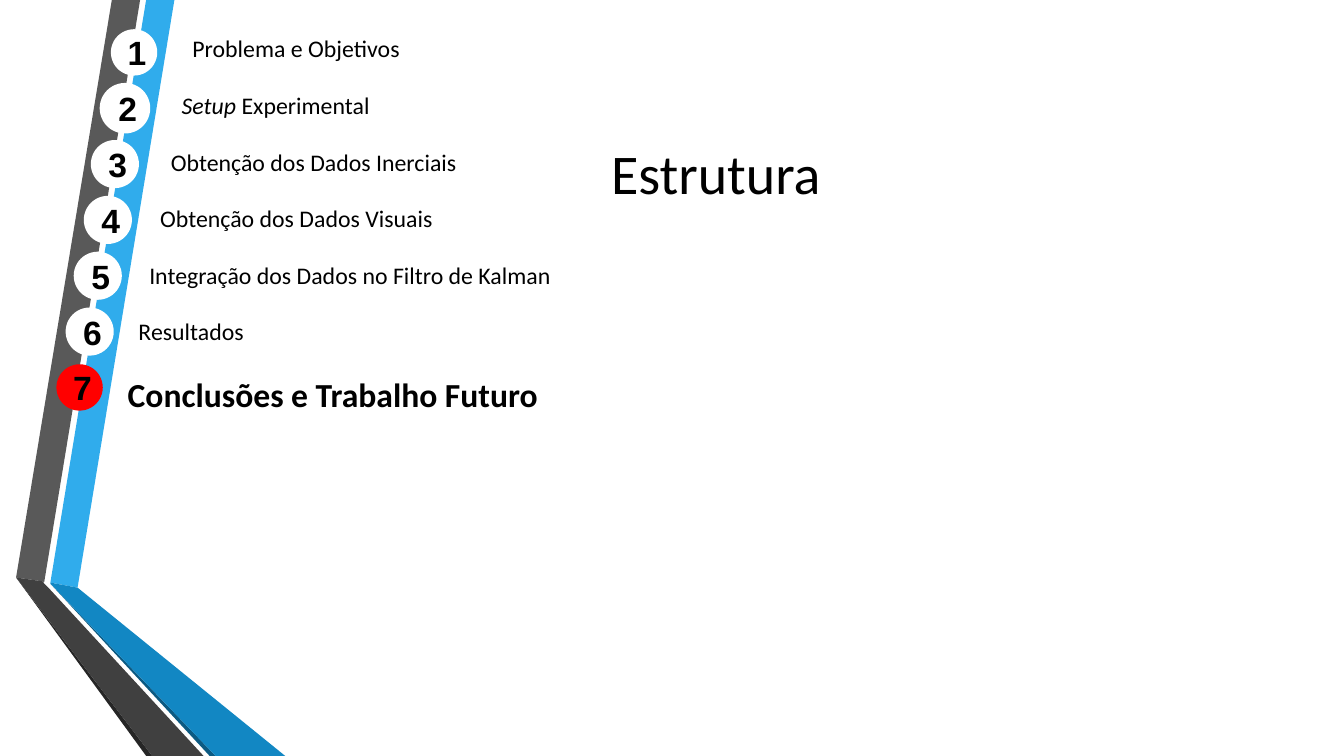
from pptx import Presentation
from pptx.dml.color import RGBColor
from pptx.enum.shapes import MSO_SHAPE
from pptx.enum.text import MSO_ANCHOR, PP_ALIGN
from pptx.util import Inches, Pt


def color(code):
    return RGBColor.from_string(code)


def write(para, text, font="Calibri", size=17, bold=False, italic=False):
    run = para.add_run()
    run.text = text
    run.font.name = font
    run.font.size = Pt(size)
    run.font.bold = bold
    run.font.italic = italic
    run.font.color.rgb = color("000000")


class Deck:
    """Holds the slide and draws each kind of element on it."""

    def __init__(self, slide):
        self.shapes = slide.shapes

    def paint(self, shape, fill, line=0):
        shape.shadow.inherit = False
        shape.fill.solid()
        shape.fill.fore_color.rgb = color(fill)
        if line:
            shape.line.color.rgb = color(fill)
            shape.line.width = Pt(line)
        else:
            shape.line.fill.background()

    def band(self, fill, points):
        spots = [(Inches(x), Inches(y)) for x, y in points]
        form = self.shapes.build_freeform(*spots[0], scale=1.0)
        form.add_line_segments(spots[1:], close=True)
        self.paint(form.convert_to_shape(), fill)

    def box(self, left, top, width, height):
        area = [Inches(v) for v in (left, top, width, height)]
        frame = self.shapes.add_textbox(*area).text_frame
        frame.word_wrap = True
        return frame

    def title(self, text):
        frame = self.box(1.62, 0.75, 10.96, 1.92)
        frame.vertical_anchor = MSO_ANCHOR.MIDDLE
        para = frame.paragraphs[0]
        para.alignment = PP_ALIGN.CENTER
        write(para, text, size=40)

    def topics(self, items):
        frame = self.box(0, 0.29, 10.51, 3.93)
        for i, runs in enumerate(items):
            para = frame.add_paragraph() if i else frame.paragraphs[0]
            if i:
                para.space_before = Pt(20)
            # Each line starts a step further left, along the band
            props = para._p.get_or_add_pPr()
            props.set("marL", str(Inches(1.81 - 0.107 * i)))
            props.set("indent", "0")
            for text, style in runs:
                write(para, text, **style)

    def badge(self, label, left, top, fill, line):
        side = Inches(0.46)
        disc = self.shapes.add_shape(
            MSO_SHAPE.OVAL, Inches(left), Inches(top), side, side)
        self.paint(disc, fill, line)
        frame = disc.text_frame
        frame.vertical_anchor = MSO_ANCHOR.MIDDLE
        para = frame.paragraphs[0]
        para.alignment = PP_ALIGN.CENTER
        write(para, label, font="Arial", size=24, bold=True)


BANDS = [
    ("30ACEC", [(0.5, 5.78), (0.77, 5.83), (1.73, 0), (1.45, 0)]),
    ("595959", [(1.39, 0), (1.11, 0), (0.16, 5.73), (0.44, 5.77)]),
    ("262626", [(0.16, 5.73), (1.45, 7.5), (1.51, 7.5)]),
    ("0C5A82", [(0.5, 5.79), (2.08, 7.5), (2.14, 7.5)]),
    ("1287C3", [(0.5, 5.79), (2.14, 7.5), (2.83, 7.5), (0.77, 5.83),
                (0.5, 5.78)]),
    ("404040", [(2.02, 7.5), (0.48, 5.83), (0.43, 5.78), (0.44, 5.77),
                (0.16, 5.73), (1.51, 7.5)]),
]
TOPICS = [
    [("Problema e Objetivos", {})],
    [("Setup", {"italic": True}), (" Experimental", {})],
    [("Obtenção dos Dados Inerciais", {})],
    [("Obtenção dos Dados Visuais", {})],
    [("Integração dos Dados no Filtro de Kalman", {})],
    [("Resultados", {})],
    [("Conclusões e Trabalho Futuro", {"size": 24, "bold": True})],
]
# Left edge and outline width of each badge
BADGES = [(1.1, 0), (1.01, 3), (0.91, 1.25), (0.84, 1.25),
          (0.74, 1.25), (0.66, 1.25), (0.56, 0)]


def main():
    prs = Presentation()
    prs.slide_width = Inches(13.33)
    prs.slide_height = Inches(7.5)
    deck = Deck(prs.slides.add_slide(prs.slide_layouts[6]))

    # Folded bands on the left
    for fill, points in BANDS:
        deck.band(fill, points)

    # Title and list of topics
    deck.title("Estrutura")
    deck.topics(TOPICS)

    # Numbered badges, the current topic in red
    for i, (left, line) in enumerate(BADGES):
        fill = "FF0000" if i == len(BADGES) - 1 else "FFFFFF"
        deck.badge(str(i + 1), left, 0.29 + 0.554 * i, fill, line)

    prs.save("out.pptx")


if __name__ == "__main__":
    main()
